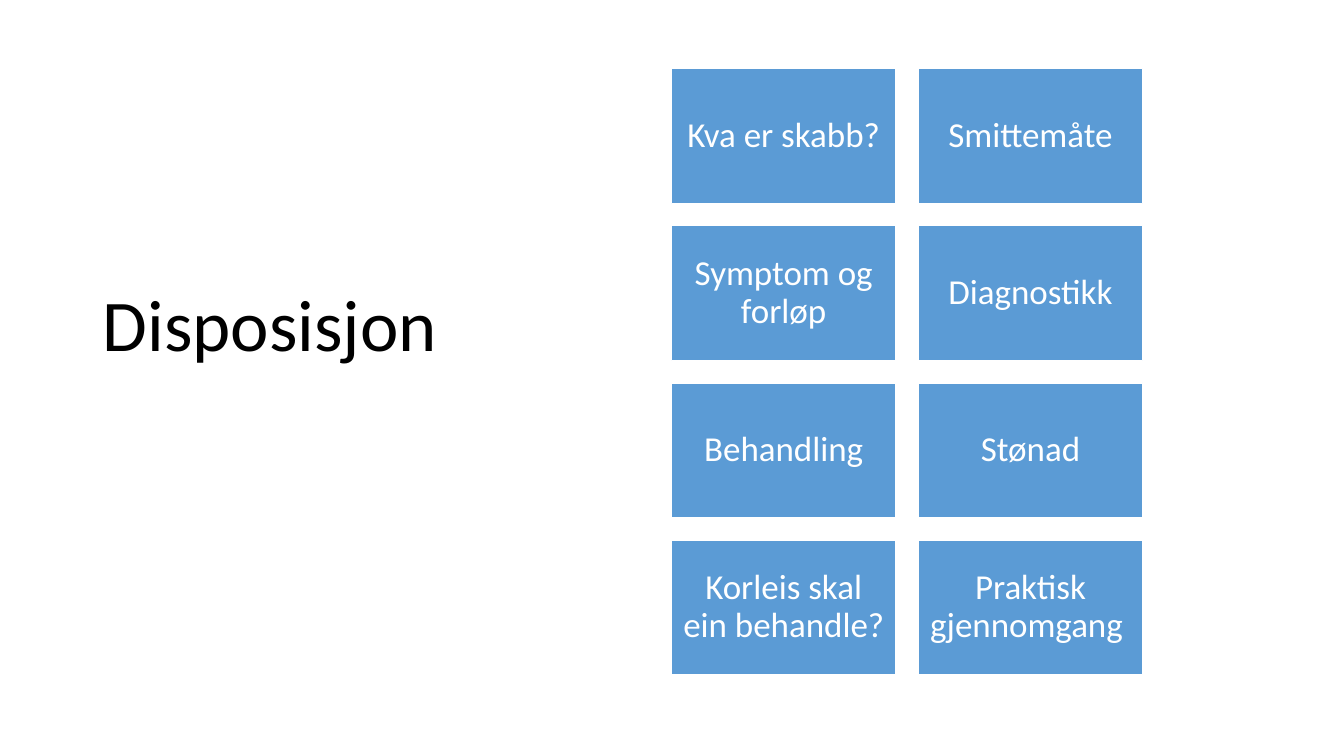
from pptx import Presentation
from pptx import util as u
from pptx.dml.color import RGBColor
from pptx.enum import shapes, text

# Content
TITLE = "Disposisjon"
TOPICS = [
    "Kva er skabb?", "Smittemåte",
    "Symptom og forløp", "Diagnostikk",
    "Behandling", "Stønad",
    "Korleis skal ein behandle?", "Praktisk gjennomgang ",
]

# Style
FONT = "Calibri"
BLACK = RGBColor(0x00, 0x00, 0x00)
WHITE = RGBColor(0xFF, 0xFF, 0xFF)
BLUE = RGBColor(0x5B, 0x9B, 0xD5)

# Topic grid, in centimetres
COLUMNS = 2
GRID_LEFT, GRID_TOP = 16.92, 1.73
TILE_WIDTH, TILE_HEIGHT = 5.66, 3.4
GAP = 0.56
TILE_INSET = u.Cm(0.25)


def write(frame, wording, size, color, alignment):
    """Put one formatted run, vertically centred, into a text frame."""
    frame.word_wrap = True
    frame.auto_size = text.MSO_AUTO_SIZE.NONE
    frame.vertical_anchor = text.MSO_ANCHOR.MIDDLE
    paragraph = frame.paragraphs[0]
    paragraph.alignment = alignment
    paragraph.line_spacing = 0.9
    run = paragraph.add_run()
    run.text = wording
    run.font.name = FONT
    run.font.size = u.Pt(size)
    run.font.color.rgb = color


def add_title(slide):
    title = slide.shapes.title
    title.left, title.top = u.Cm(2.34), u.Cm(1.55)
    title.width, title.height = u.Cm(9.37), u.Cm(15.47)
    # The deep bottom margin lifts the title above the middle
    title.text_frame.margin_bottom = u.Cm(2.15)
    write(title.text_frame, TITLE, 52, BLACK, text.PP_ALIGN.LEFT)


def add_tile(slide, index, topic):
    row, column = divmod(index, COLUMNS)
    tile = slide.shapes.add_shape(
        shapes.MSO_SHAPE.RECTANGLE,
        u.Cm(GRID_LEFT + column * (TILE_WIDTH + GAP)),
        u.Cm(GRID_TOP + row * (TILE_HEIGHT + GAP)),
        u.Cm(TILE_WIDTH), u.Cm(TILE_HEIGHT))
    tile.shadow.inherit = False
    tile.fill.solid()
    tile.fill.fore_color.rgb = BLUE
    tile.line.color.rgb = WHITE
    tile.line.width = u.Pt(1)
    frame = tile.text_frame
    frame.margin_left = frame.margin_right = TILE_INSET
    frame.margin_top = frame.margin_bottom = TILE_INSET
    write(frame, topic, 25, WHITE, text.PP_ALIGN.CENTER)


def main():
    presentation = Presentation()
    presentation.slide_width = u.Cm(33.87)
    presentation.slide_height = u.Cm(19.05)
    title_only = presentation.slide_layouts.get_by_name("Title Only")
    slide = presentation.slides.add_slide(title_only)
    add_title(slide)
    for index, topic in enumerate(TOPICS):
        add_tile(slide, index, topic)
    presentation.save("out.pptx")


if __name__ == "__main__":
    main()
